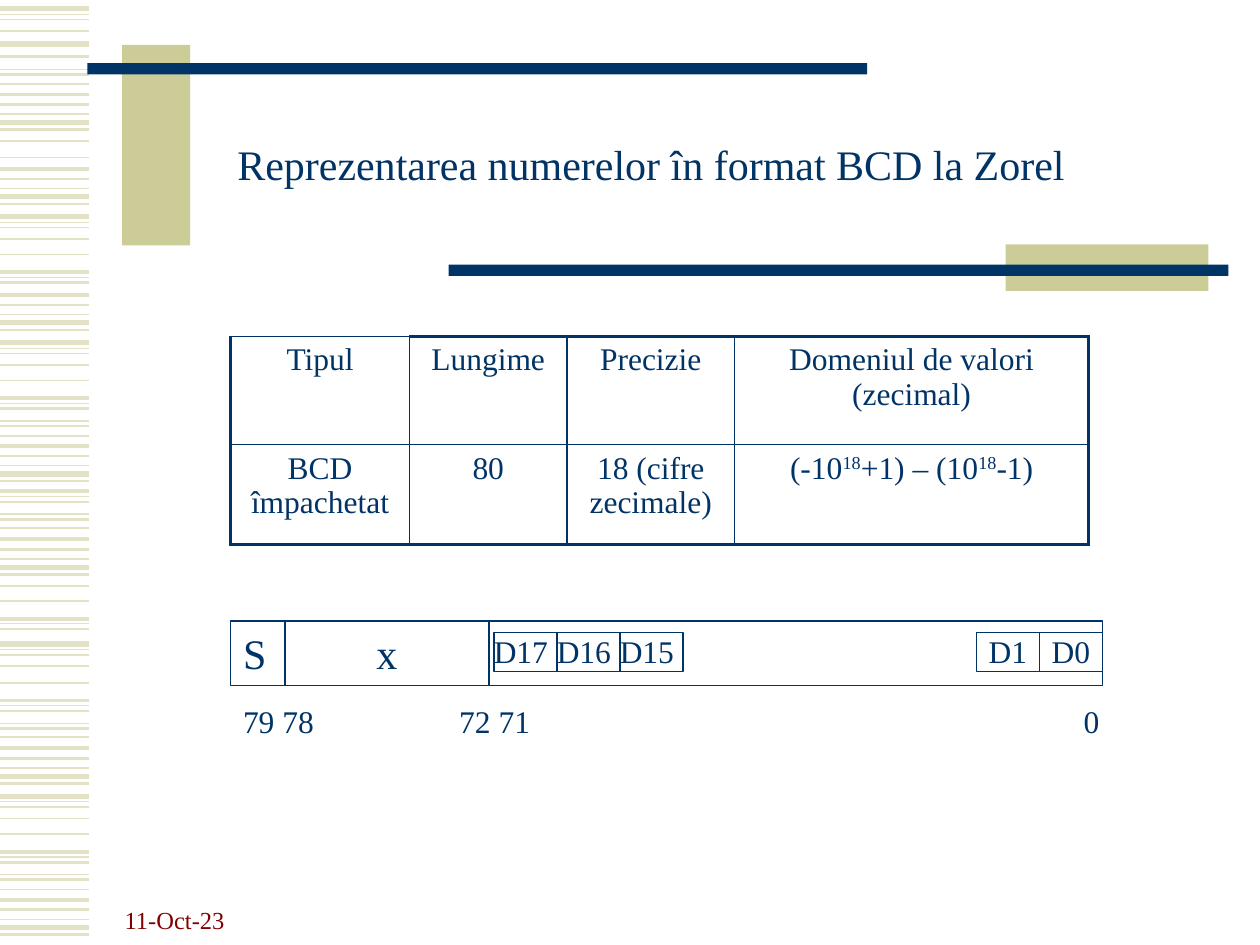
from dataclasses import dataclass

from lxml.etree import SubElement
from pptx import Presentation
from pptx.dml.color import RGBColor
from pptx.enum.shapes import MSO_CONNECTOR as Connector, MSO_SHAPE as Shape
from pptx.enum.text import MSO_ANCHOR as Anchor, PP_ALIGN as Align
from pptx.oxml.ns import qn
from pptx.util import Pt


@dataclass(frozen=True)
class Theme:
    font: str = "Times New Roman"
    navy: str = "003366"
    olive: str = "CCCC99"
    pale: str = "E3E2C7"
    maroon: str = "800000"
    large: float = 24
    body: float = 18
    small: float = 14
    thin: float = 1
    thick: float = 2.25
    inset: float = 7.2


theme = Theme()

# Content
TITLE = "Reprezentarea numerelor în format BCD la Zorel"
DATE = "11-Oct-23"
TABLE_ROWS = [
    ["Tipul", "Lungime", "Precizie", "Domeniul de valori (zecimal)"],
    # a caret opens and closes a superscript
    ["BCD împachetat", "80", "18 (cifre zecimale)", "(-10^18^+1) – (10^18^-1)"],
]
COLUMN_WIDTHS = [102.2, 90, 95.8, 202.3]
ROW_HEIGHTS = [61.9, 57.2]

FIELDS = [("S", 31, Align.LEFT), ("x", 116.6, Align.CENTER), ("", 350.6, Align.LEFT)]
HIGH_DIGITS = ["D17", "D16", "D15"]
LOW_DIGITS = ["D1", "D0"]
# label, left, width, indent
BIT_LABELS = [("79 78", 131.8, 72, 0), ("72 71", 246.2, 90, 9), ("0", 594, 72, 18)]

# Decoration: left, top, width, height, colour
BARS = [
    (69.8, 25.7, 38.9, 114.5, theme.olive),
    (49.9, 36, 445.7, 6.5, theme.navy),
    (574.6, 139.7, 116, 26.6, theme.olive),
    (256.3, 151.2, 445.7, 6.5, theme.navy),
]
# Stripe motifs: (offset, weight) pairs, then the heights where each starts
MOTIFS = [
    ([(0, 3), (3.2, 0.75), (6.2, 1), (12.8, 1)],
     [5, 123.8, 195.8, 368, 455]),
    ([(0, 1)],
     [48.2, 80.6, 90, 145.4, 217.4, 249.1, 301.7, 334.8, 343.4, 390.2,
      421.2, 476.6, 508.3]),
    ([(0, 2.25), (3, 0.75), (6, 1.5)],
     [155.5, 227.5, 280.8, 353.5, 400.3, 486.7]),
    ([(0, 0.75), (3, 1.5)],
     [39.6, 240.5, 293.8, 413.3, 499.7]),
    ([(0, 2.25), (5.8, 1.5), (11.2, 0.75), (16, 3), (20, 1.5)],
     [54, 96.5, 168.5, 254.9, 308.2, 427.7, 514.1]),
    ([(0, 3), (7.2, 1.5)],
     [25.2]),
]
STRIPE_WIDTH = 51.1

# Layout
DIAGRAM_LEFT, TABLE_TOP = 131.8, 192.2
FIELD_TOP, FIELD_HEIGHT = 355, 36.7
DIGIT_TOP, DIGIT_WIDTH, DIGIT_HEIGHT = 361.4, 36, 22.3
LABEL_TOP, LABEL_HEIGHT = 397.4, 28.8


def colour(code):
    return RGBColor.from_string(code)


def write(frame, text, size, code=theme.navy, align=Align.LEFT):
    """Fill a text frame with one paragraph, raising every part between carets."""
    para = frame.paragraphs[0]
    para.alignment = align
    para.font.name, para.font.size = theme.font, Pt(size)
    para.font.color.rgb = colour(code)
    for index, part in enumerate(text.split("^")):
        span = para.add_run()
        span.text = part
        if index % 2:
            span._r.get_or_add_rPr().set("baseline", "30000")
    return para


def add_text(page, text, area, size, code=theme.navy, align=Align.LEFT,
             anchor=Anchor.TOP, indent=0):
    frame = page.shapes.add_textbox(*map(Pt, area)).text_frame
    frame.word_wrap = True
    frame.vertical_anchor = anchor
    frame.margin_left = Pt(theme.inset + indent)
    return write(frame, text, size, code, align)


def add_box(page, area, fill=None):
    box = page.shapes.add_shape(Shape.RECTANGLE, *map(Pt, area))
    box.shadow.inherit = False
    if fill:
        box.fill.solid()
        box.fill.fore_color.rgb = colour(fill)
        box.line.fill.background()
    else:
        box.fill.background()
        box.line.color.rgb = colour(theme.navy)
        box.line.width = Pt(theme.thin)
    box.text_frame.vertical_anchor = Anchor.TOP
    return box


def add_stripe(page, y, weight):
    line = page.shapes.add_connector(
        Connector.STRAIGHT, Pt(0), Pt(y), Pt(STRIPE_WIDTH), Pt(y))
    line.line.color.rgb = colour(theme.pale)
    line.line.width = Pt(weight)
    SubElement(line._element.spPr, qn("a:effectLst"))


def set_borders(cell, thick_sides):
    properties = cell._tc.get_or_add_tcPr()
    for position, side in enumerate("LRTB"):
        weight = theme.thick if side in thick_sides else theme.thin
        border = properties.makeelement(qn(f"a:ln{side}"), {"w": str(Pt(weight))})
        properties.insert(position, border)
        fill = SubElement(border, qn("a:solidFill"))
        SubElement(fill, qn("a:srgbClr"), val=theme.navy)


def add_type_table(page):
    table = page.shapes.add_table(
        len(ROW_HEIGHTS), len(COLUMN_WIDTHS), Pt(DIAGRAM_LEFT), Pt(TABLE_TOP),
        Pt(sum(COLUMN_WIDTHS)), Pt(sum(ROW_HEIGHTS))).table
    table.first_row = table.horz_banding = False
    for column, width in zip(table.columns, COLUMN_WIDTHS):
        column.width = Pt(width)
    for r, (height, texts) in enumerate(zip(ROW_HEIGHTS, TABLE_ROWS)):
        table.rows[r].height = Pt(height)
        for c, text in enumerate(texts):
            cell = table.cell(r, c)
            cell.fill.background()
            write(cell.text_frame, text, theme.body, align=Align.CENTER)
            outer = {"L": c == 0, "R": c == len(texts) - 1,
                     "T": r == 0 and c > 0, "B": r == len(TABLE_ROWS) - 1}
            set_borders(cell, [side for side, thick in outer.items() if thick])


def add_digits(page, digits, left, align):
    for index, digit in enumerate(digits):
        box = add_box(page, (left + index * DIGIT_WIDTH, DIGIT_TOP,
                             DIGIT_WIDTH, DIGIT_HEIGHT))
        frame = box.text_frame
        frame.margin_left = frame.margin_right = 0
        frame.margin_top = frame.margin_bottom = 0
        write(frame, digit, theme.body, align=align)


def add_register(page):
    left = DIAGRAM_LEFT
    for name, width, align in FIELDS:
        box = add_box(page, (left, FIELD_TOP, width, FIELD_HEIGHT))
        if name:
            write(box.text_frame, name, theme.large, align=align)
        left += width
    for label, start, width, indent in BIT_LABELS:
        add_text(page, label, (start, LABEL_TOP, width, LABEL_HEIGHT),
                 theme.body, indent=indent)
    digits_start = left - FIELDS[-1][1] + 2.8
    add_digits(page, HIGH_DIGITS, digits_start, Align.LEFT)
    add_digits(page, LOW_DIGITS, left - len(LOW_DIGITS) * DIGIT_WIDTH, Align.CENTER)


def main():
    deck = Presentation()
    deck.slide_width, deck.slide_height = Pt(720), Pt(540)
    page = deck.slides.add_slide(deck.slide_layouts[6])

    # Side stripes and header bars
    for motif, starts in MOTIFS:
        for start in starts:
            for offset, weight in motif:
                add_stripe(page, start + offset, weight)
    for *area, fill in BARS:
        add_box(page, area, fill)

    # Date and title
    add_text(page, DATE, (64.1, 501.8, 149.8, 36), theme.small, theme.maroon,
             anchor=Anchor.BOTTOM)
    title = add_text(page, TITLE, (66.2, 30.2, 612, 131.8), theme.large,
                     align=Align.CENTER, anchor=Anchor.MIDDLE)
    title.line_spacing = 0.85

    # Type table and register diagram
    add_type_table(page)
    add_register(page)
    deck.save("out.pptx")


if __name__ == "__main__":
    main()
